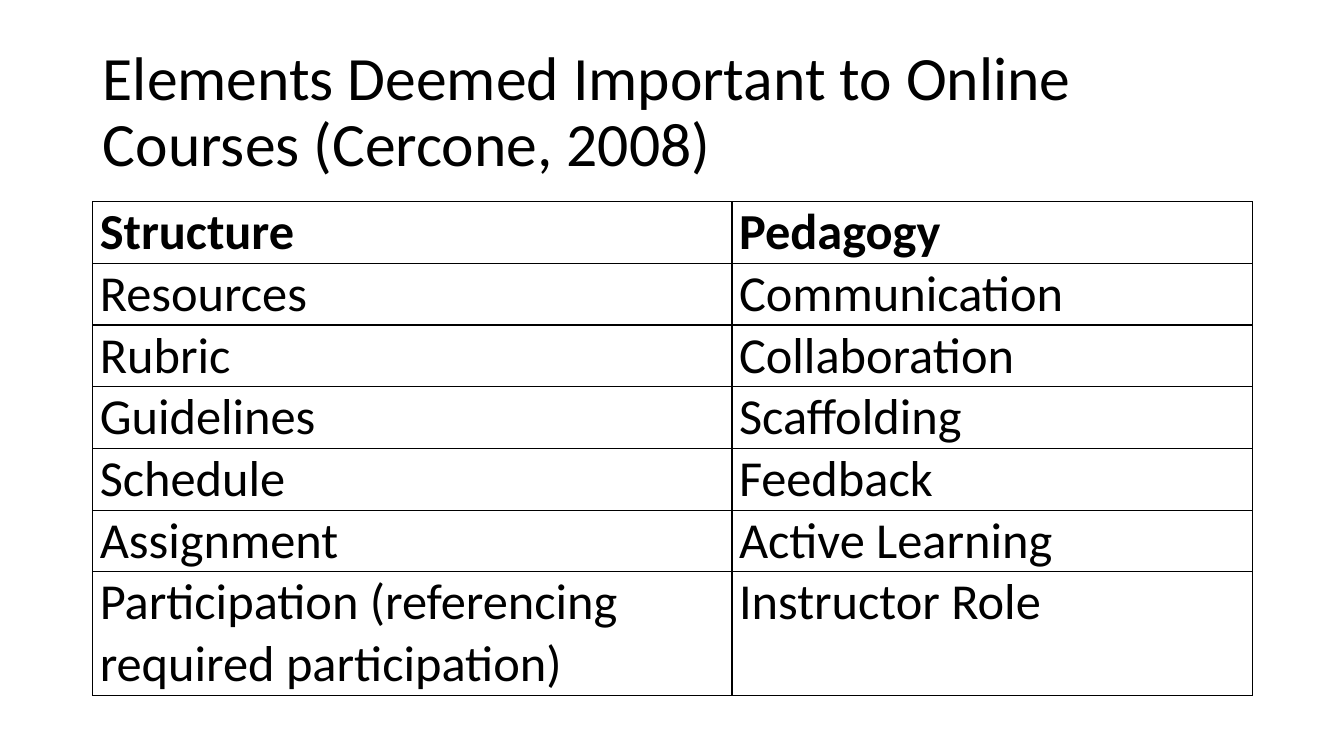
from typing import NamedTuple

from lxml.etree import SubElement
from pptx import Presentation
from pptx.dml.color import RGBColor
from pptx.enum.text import MSO_ANCHOR, MSO_AUTO_SIZE, PP_ALIGN
from pptx.oxml.ns import qn
from pptx.slide import Slide
from pptx.table import Table, _Cell
from pptx.text.text import Font
from pptx.util import Inches, Pt

FONT_NAME = "Calibri"
BLACK = "000000"
WHITE = "FFFFFF"
LEFT, WIDTH = 0.92, 11.5
TITLE_TOP, TITLE_HEIGHT = 0.4, 1.45
TABLE_TOP = 2.0
LINE_HEIGHT = 0.61
COLUMN_WIDTHS = (6.34, 5.16)


class ElementRow(NamedTuple):
    structure: str
    pedagogy: str
    lines: int = 1
    bold: bool = False


ROWS = [
    ElementRow("Structure", "Pedagogy", bold=True),
    ElementRow("Resources", "Communication"),
    ElementRow("Rubric", "Collaboration"),
    ElementRow("Guidelines", "Scaffolding"),
    ElementRow("Schedule", "Feedback"),
    ElementRow("Assignment", "Active Learning"),
    ElementRow("Participation (referencing required participation)",
               "Instructor Role", lines=2),
]


def color(hex_value: str) -> RGBColor:
    return RGBColor.from_string(hex_value)


def format_font(font: Font, size: float, bold: bool = False) -> None:
    font.name = FONT_NAME
    font.size = Pt(size)
    font.bold = bold
    font.color.rgb = color(BLACK)


def add_borders(cell: _Cell, hex_value: str, width: float) -> None:
    """Border lines come before the fill in the cell properties."""
    properties = cell._tc.get_or_add_tcPr()
    for position, side in enumerate(("lnL", "lnR", "lnT", "lnB")):
        line = SubElement(properties, qn(f"a:{side}"), w=str(Pt(width)))
        fill = SubElement(line, qn("a:solidFill"))
        SubElement(fill, qn("a:srgbClr"), val=hex_value)
        properties.insert(position, line)


def fill_cell(cell: _Cell, text: str, bold: bool) -> None:
    cell.margin_left = cell.margin_right = Inches(0.07)
    cell.margin_top = cell.margin_bottom = 0
    cell.fill.background()
    add_borders(cell, BLACK, 1)
    cell.text_frame.text = text
    format_font(cell.text_frame.paragraphs[0].runs[0].font, 36, bold)


def add_title(slide: Slide, text: str) -> None:
    title = slide.shapes.title
    title.left, title.top = Inches(LEFT), Inches(TITLE_TOP)
    title.width, title.height = Inches(WIDTH), Inches(TITLE_HEIGHT)
    frame = title.text_frame
    frame.text = text
    frame.word_wrap = True
    frame.auto_size = MSO_AUTO_SIZE.NONE
    frame.vertical_anchor = MSO_ANCHOR.MIDDLE
    paragraph = frame.paragraphs[0]
    paragraph.alignment = PP_ALIGN.LEFT
    paragraph.line_spacing = 0.9
    format_font(paragraph.runs[0].font, 44)


def add_elements_table(slide: Slide, rows: list[ElementRow]) -> Table:
    height = LINE_HEIGHT * sum(row.lines for row in rows)
    table = slide.shapes.add_table(
        len(rows), len(COLUMN_WIDTHS), Inches(LEFT), Inches(TABLE_TOP),
        Inches(WIDTH), Inches(height)).table
    table.first_row = table.horz_banding = False
    for column, width in zip(table.columns, COLUMN_WIDTHS):
        column.width = Inches(width)
    for table_row, row in zip(table.rows, rows):
        table_row.height = Inches(LINE_HEIGHT * row.lines)
        for cell, text in zip(table_row.cells, (row.structure, row.pedagogy)):
            fill_cell(cell, text, row.bold)
    return table


def main() -> None:
    presentation = Presentation()
    presentation.slide_width = Inches(13.33)
    presentation.slide_height = Inches(7.5)
    title_only = presentation.slide_layouts[5]
    slide = presentation.slides.add_slide(title_only)
    slide.background.fill.solid()
    slide.background.fill.fore_color.rgb = color(WHITE)

    add_title(slide, "Elements Deemed Important to Online Courses (Cercone, 2008)")
    add_elements_table(slide, ROWS)
    presentation.save("out.pptx")


if __name__ == "__main__":
    main()
